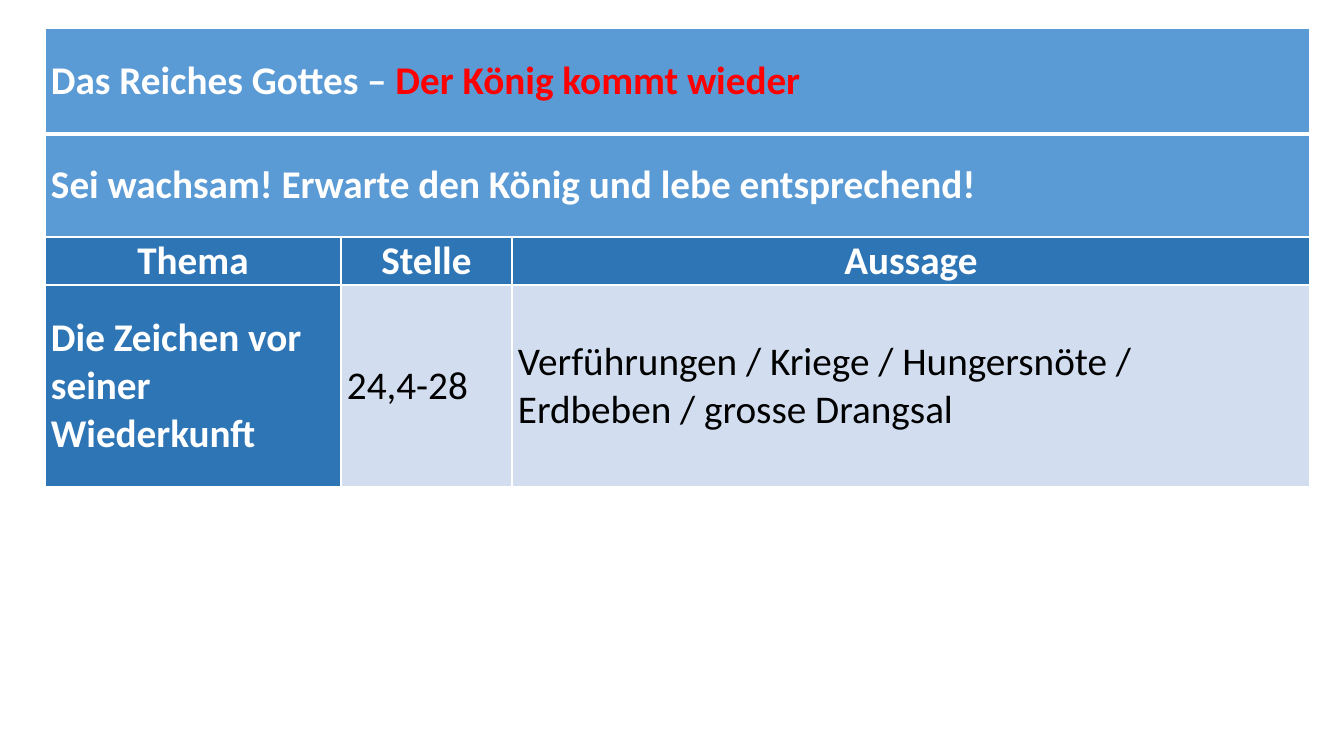
from lxml.etree import SubElement
from pptx import Presentation
from pptx.dml.color import RGBColor
from pptx.enum.text import MSO_ANCHOR, PP_ALIGN
from pptx.oxml.ns import qn
from pptx.util import Emu, Pt

WHITE, BLACK, RED = "FFFFFF", "000000", "FF0000"
BANNER, HEADING, BODY = "5B9BD5", "2E75B6", "D2DEEF"

BANNERS = [
    [("Das Reiches Gottes – ", WHITE), ("Der König kommt wieder", RED)],
    [("Sei wachsam! Erwarte den König und lebe entsprechend!", WHITE)],
]
HEADINGS = ["Thema", "Stelle", "Aussage"]
TOPIC = "Die Zeichen vor seiner Wiederkunft"
DETAILS = ["24,4-28", "Verführungen / Kriege / Hungersnöte / Erdbeben / grosse Drangsal"]

SLIDE_SIZE = (1344, 756)
TABLE_ORIGIN = (45, 28)
COLUMN_WIDTHS = [296, 171, 798]
ROW_HEIGHTS = [106, 103, 48, 202]
CELL_FORMAT = {
    "margin_left": 6, "margin_right": 6, "margin_top": 0, "margin_bottom": 0,
}
FONT_FORMAT = {"name": "Calibri", "size": Pt(28)}


def px(length):
    return Emu(round(length * 914400 / 100.8))


def color(value):
    return RGBColor.from_string(value)


def add_borders(cell, bottom_width):
    properties = cell._tc.get_or_add_tcPr()
    for side, width in {"L": 1, "R": 1, "T": 1, "B": bottom_width}.items():
        border = SubElement(properties, qn(f"a:ln{side}"), w=str(Pt(width)))
        SubElement(SubElement(border, qn("a:solidFill")), qn("a:srgbClr"), val=WHITE)


def format_cell(cell, fill, bottom_width=1):
    add_borders(cell, bottom_width)
    cell.fill.solid()
    cell.fill.fore_color.rgb = color(fill)
    cell.vertical_anchor = MSO_ANCHOR.MIDDLE
    for margin, length in CELL_FORMAT.items():
        setattr(cell, margin, px(length))


def write_cell(cell, phrases, bold=True, alignment=PP_ALIGN.LEFT):
    paragraph = cell.text_frame.paragraphs[0]
    paragraph.alignment = alignment
    for words, ink in phrases:
        run = paragraph.add_run()
        run.text = words
        for attribute, value in {**FONT_FORMAT, "bold": bold}.items():
            setattr(run.font, attribute, value)
        run.font.color.rgb = color(ink)


def main():
    presentation = Presentation()
    presentation.slide_width, presentation.slide_height = map(px, SLIDE_SIZE)
    slide = presentation.slides.add_slide(presentation.slide_layouts[6])
    table = slide.shapes.add_table(
        len(ROW_HEIGHTS), len(COLUMN_WIDTHS), *map(px, TABLE_ORIGIN),
        px(sum(COLUMN_WIDTHS)), px(sum(ROW_HEIGHTS)),
    ).table
    for column, width in zip(table.columns, COLUMN_WIDTHS):
        column.width = px(width)
    for row, height in zip(table.rows, ROW_HEIGHTS):
        row.height = px(height)

    last_column = len(COLUMN_WIDTHS) - 1
    for row, phrases in enumerate(BANNERS):
        for column in range(len(COLUMN_WIDTHS)):
            format_cell(table.cell(row, column), BANNER, 3 if row == 0 else 1)
        table.cell(row, 0).merge(table.cell(row, last_column))
        write_cell(table.cell(row, 0), phrases)

    heading_row = len(BANNERS)
    for column, heading in enumerate(HEADINGS):
        cell = table.cell(heading_row, column)
        format_cell(cell, HEADING)
        write_cell(cell, [(heading, WHITE)], alignment=PP_ALIGN.CENTER)

    topic_row = heading_row + 1
    format_cell(table.cell(topic_row, 0), HEADING)
    write_cell(table.cell(topic_row, 0), [(TOPIC, WHITE)])
    for column, detail in enumerate(DETAILS, start=1):
        cell = table.cell(topic_row, column)
        format_cell(cell, BODY)
        write_cell(cell, [(detail, BLACK)], bold=False)

    presentation.save("out.pptx")


if __name__ == "__main__":
    main()
